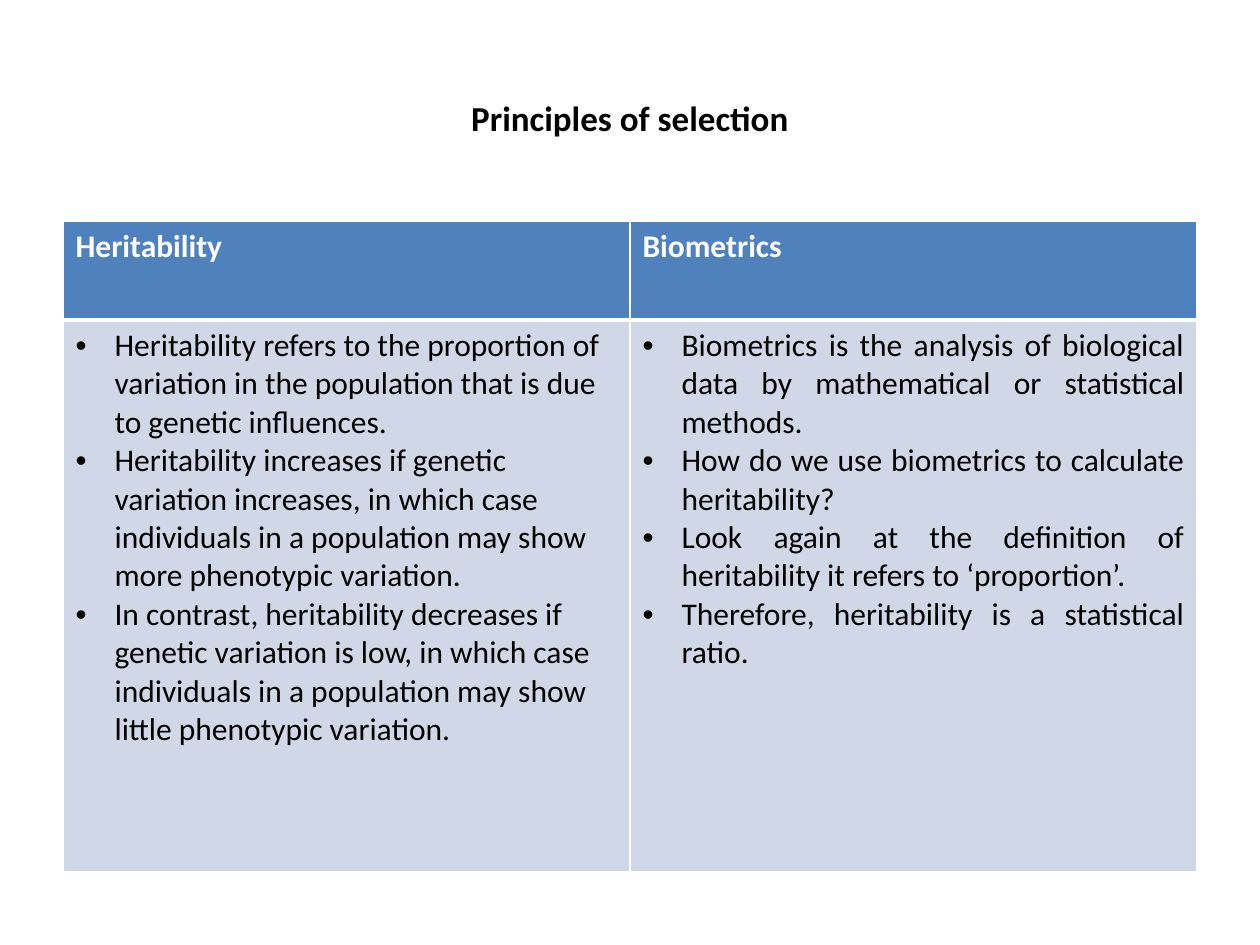
from lxml import etree
from pptx import Presentation, util as u
from pptx.dml.color import RGBColor
from pptx.enum import text
from pptx.oxml import ns

WHITE = RGBColor(0xFF, 0xFF, 0xFF)
BLACK = RGBColor(0x00, 0x00, 0x00)
BLUE = RGBColor(0x4F, 0x81, 0xBD)
PALE_BLUE = RGBColor(0xD0, 0xD8, 0xE8)
FONT = "Calibri"
PX_PER_INCH = 126
INDENT = 39

TOPICS = {
    "Heritability": (text.PP_ALIGN.LEFT, [
        "Heritability refers to the proportion of variation in the population that is due to genetic influences.",
        "Heritability increases if genetic variation increases, in which case individuals in a population may show more phenotypic variation.",
        "In contrast, heritability decreases if genetic variation is low, in which case individuals in a population may show little phenotypic variation.",
    ]),
    "Biometrics": (text.PP_ALIGN.JUSTIFY, [
        "Biometrics is the analysis of biological data by mathematical or statistical methods.",
        "How do we use biometrics to calculate heritability?",
        "Look again at the definition of heritability it refers to ‘proportion’.",
        "Therefore, heritability is a statistical ratio.",
    ]),
}


def px(length):
    """Turn pixels into EMU."""
    return u.Emu(round(length * 914400 / PX_PER_INCH))


def add_run(paragraph, words, size, color, bold=False):
    """Add one formatted run to a paragraph."""
    run = paragraph.add_run()
    run.text = words
    run.font.name = FONT
    run.font.size = u.Pt(size)
    run.font.bold = bold
    run.font.color.rgb = color


def add_title(slide, words):
    """Add the centred slide title."""
    box = slide.shapes.add_textbox(px(63), px(38), px(1134), px(158))
    frame = box.text_frame
    frame.word_wrap = True
    frame.vertical_anchor = text.MSO_ANCHOR.MIDDLE
    paragraph = frame.paragraphs[0]
    paragraph.alignment = text.PP_ALIGN.CENTER
    add_run(paragraph, words, 20, BLACK, bold=True)


def set_bullet(paragraph):
    """Give a paragraph a hanging round bullet."""
    properties = paragraph._p.get_or_add_pPr()
    properties.set("marL", str(px(INDENT)))
    properties.set("indent", str(-px(INDENT)))
    etree.SubElement(properties, ns.qn("a:buFont"), typeface="Arial")
    etree.SubElement(properties, ns.qn("a:buChar"), char="•")


def style_cell(cell, color, top, bottom):
    """Set the white borders and the fill of a cell."""
    properties = cell._tc.get_or_add_tcPr()
    for side, width in (("L", 1), ("R", 1), ("T", top), ("B", bottom)):
        line = etree.SubElement(properties, ns.qn(f"a:ln{side}"), w=str(u.Pt(width)))
        fill = etree.SubElement(line, ns.qn("a:solidFill"))
        etree.SubElement(fill, ns.qn("a:srgbClr"), val=str(WHITE))
    cell.fill.solid()
    cell.fill.fore_color.rgb = color


def fill_bullets(cell, alignment, points):
    """Write the points as bulleted paragraphs in a cell."""
    frame = cell.text_frame
    for index, point in enumerate(points):
        paragraph = frame.add_paragraph() if index else frame.paragraphs[0]
        paragraph.alignment = alignment
        set_bullet(paragraph)
        add_run(paragraph, point, 18, BLACK)


def add_topic_table(slide, topics):
    """Add a table with one column for each topic."""
    frame = slide.shapes.add_table(2, len(topics), px(63), px(221), px(1134), px(651))
    table = frame.table
    table.horz_banding = False
    for row, height in zip(table.rows, (99, 552)):
        row.height = px(height)
    for column, (heading, (alignment, points)) in enumerate(topics.items()):
        header, body = table.cell(0, column), table.cell(1, column)
        style_cell(header, BLUE, top=1, bottom=3)
        style_cell(body, PALE_BLUE, top=3, bottom=1)
        add_run(header.text_frame.paragraphs[0], heading, 18, WHITE, bold=True)
        fill_bullets(body, alignment, points)


def main():
    """Build and save the slide."""
    presentation = Presentation()
    presentation.slide_width = px(1260)
    presentation.slide_height = px(945)
    slide = presentation.slides.add_slide(presentation.slide_layouts[6])
    add_title(slide, "Principles of selection")
    add_topic_table(slide, TOPICS)
    presentation.save("out.pptx")


if __name__ == "__main__":
    main()
